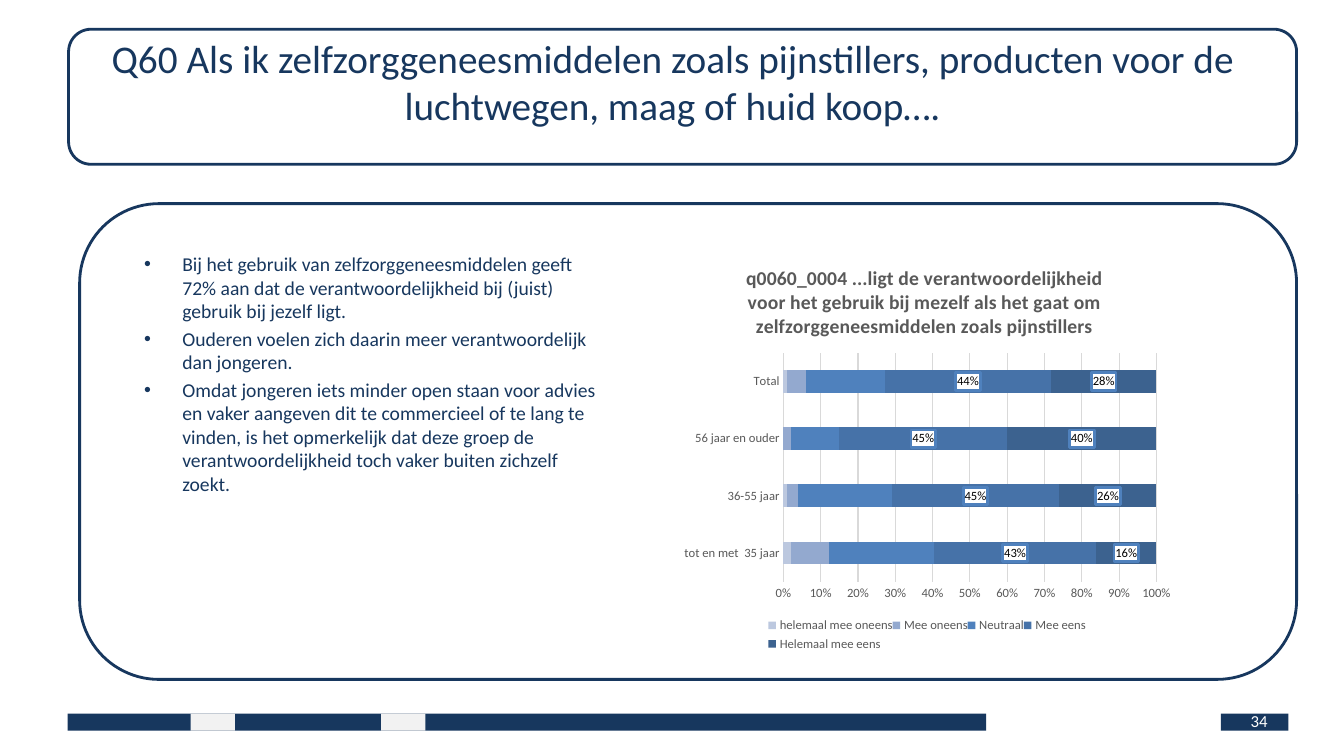
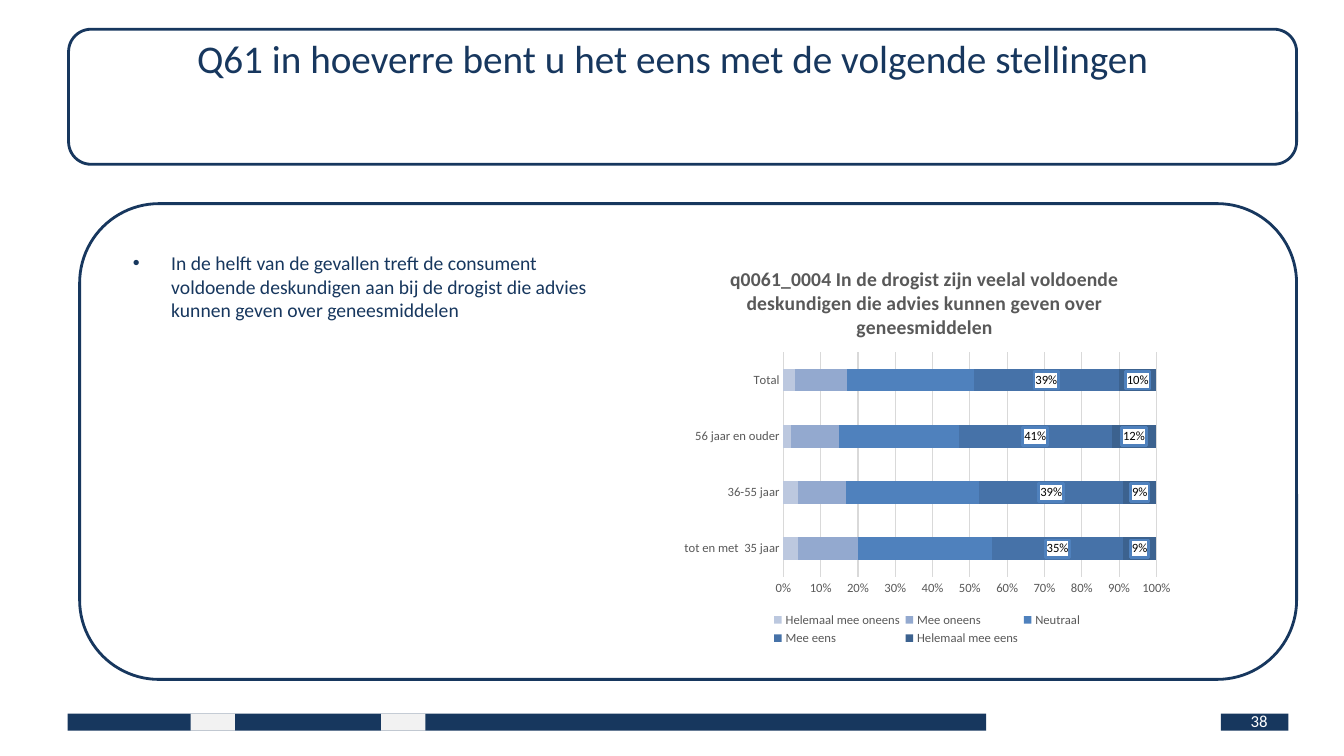
from lxml.etree import SubElement
from pptx import Presentation
from pptx.chart.data import CategoryChartData as ChartData
from pptx.dml.color import RGBColor
from pptx.enum.chart import XL_CHART_TYPE as Chart, XL_LEGEND_POSITION as Legend, XL_TICK_MARK as Tick
from pptx.enum.shapes import MSO_SHAPE as Shape
from pptx.enum.text import MSO_ANCHOR as Anchor, PP_ALIGN as Align
from pptx.oxml import parse_xml
from pptx.oxml.ns import nsdecls, qn
from pptx.util import Inches, Pt

NAVY = RGBColor(0x17, 0x37, 0x5E)
PALE = RGBColor(0xF2, 0xF2, 0xF2)
WHITE = RGBColor(0xFF, 0xFF, 0xFF)
BLACK = RGBColor(0, 0, 0)
GREY = RGBColor(0x59, 0x59, 0x59)
GRID = RGBColor(0xD9, 0xD9, 0xD9)
BLUES = [RGBColor.from_string(c) for c in ("BCC8DF", "93A9CF", "4F81BD", "4672A8", "3C628F")]
FONT = "Calibri"

GROUPS = ["tot en met  35 jaar", "36-55 jaar", "56 jaar en ouder", "Total"]
SCALE = ["Mee oneens", "Neutraal", "Mee eens", "Helemaal mee eens"]
LABELS = SCALE[-2:]

SLIDES = [
    {
        "title": "Q60 Als ik zelfzorggeneesmiddelen zoals pijnstillers, producten voor de "
                 "luchtwegen, maag of huid koop….",
        "points": [
            "Bij het gebruik van zelfzorggeneesmiddelen geeft 72% aan dat de "
            "verantwoordelijkheid bij (juist) gebruik bij jezelf ligt.",
            "Ouderen voelen zich daarin meer verantwoordelijk dan jongeren.",
            "Omdat jongeren iets minder open staan voor advies en vaker aangeven dit te "
            "commercieel of te lang te vinden, is het opmerkelijk dat deze groep de "
            "verantwoordelijkheid toch vaker buiten zichzelf zoekt.",
        ],
        "text_box": (1.33, 2.45, 4.79, 4.05),
        "chart_box": (6.67, 2.45, 5, 4.05),
        "head": "q0060_0004 ...ligt de verantwoordelijkheid voor het gebruik bij mezelf als "
                "het gaat om zelfzorggeneesmiddelen zoals pijnstillers",
        "names": ["helemaal mee oneens"] + SCALE,
        "rows": [
            (0.02, 0.01, 0, 0.01),
            (0.1, 0.03, 0.02, 0.05),
            (0.28, 0.25, 0.13, 0.21),
            (0.43, 0.45, 0.45, 0.44),
            (0.16, 0.26, 0.4, 0.28),
        ],
        "page": "34",
    },
    {
        "title": "Q61 in hoeverre bent u het eens met de volgende stellingen",
        "points": [
            "In de helft van de gevallen treft de consument voldoende deskundigen aan bij "
            "de drogist die advies kunnen geven over geneesmiddelen",
        ],
        "text_box": (1.22, 2.44, 4.95, 3.98),
        "chart_box": (6.67, 2.46, 5, 3.98),
        "head": "q0061_0004 In de drogist zijn veelal voldoende deskundigen die advies "
                "kunnen geven over geneesmiddelen",
        "names": ["Helemaal mee oneens"] + SCALE,
        "rows": [
            (0.04, 0.04, 0.02, 0.03),
            (0.16, 0.13, 0.13, 0.14),
            (0.36, 0.36, 0.32, 0.34),
            (0.35, 0.39, 0.41, 0.39),
            (0.09, 0.09, 0.12, 0.1),
        ],
        "page": "38",
    },
]


def inch(box):
    return [Inches(v) for v in box]


def style(font, size, color, bold=False):
    font.name, font.size, font.bold = FONT, Pt(size), bold
    font.color.rgb = color


def add_block(slide, kind, box, fill=None, line=None):
    block = slide.shapes.add_shape(kind, *inch(box))
    block.shadow.inherit = False
    if fill is None:
        block.fill.background()
    else:
        block.fill.solid()
        block.fill.fore_color.rgb = fill
    if line is None:
        block.line.fill.background()
    else:
        block.line.color.rgb = line
        block.line.width = Pt(2)


def add_frame(slide, page):
    # Footer band
    for left, width, fill in ((0.67, 9.11, NAVY), (12.11, 0.67, NAVY),
                              (1.89, 0.44, PALE), (3.78, 0.44, PALE)):
        add_block(slide, Shape.RECTANGLE, (left, 7.08, width, 0.17), fill)
    # Title and content panels
    add_block(slide, Shape.ROUNDED_RECTANGLE, (0.68, 0.29, 12.18, 1.34), WHITE, NAVY)
    add_block(slide, Shape.ROUNDED_RECTANGLE, (0.79, 2.02, 12.07, 4.72), None, NAVY)
    # Page number
    frame = slide.shapes.add_textbox(*inch((9.56, 6.95, 3.11, 0.4))).text_frame
    frame.word_wrap = True
    frame.vertical_anchor = Anchor.MIDDLE
    para = frame.paragraphs[0]
    para.text, para.alignment = page, Align.RIGHT
    style(para.font, 12, WHITE)


def set_title(slide, text):
    title = slide.shapes.title
    title.left, title.top, title.width, title.height = inch((0.67, 0.29, 12, 1.25))
    frame = title.text_frame
    frame.text = text
    frame.word_wrap = True
    frame.vertical_anchor = Anchor.TOP
    para = frame.paragraphs[0]
    para.alignment = Align.CENTER
    style(para.font, 28, NAVY)
    # Bring the title in front of its panel
    slide.shapes.element.append(title.element)


def add_points(slide, box, points):
    frame = slide.shapes.add_textbox(*inch(box)).text_frame
    frame.word_wrap = True
    for i, text in enumerate(points):
        para = frame.add_paragraph() if i else frame.paragraphs[0]
        para.text = text
        props = para._p.get_or_add_pPr()
        props.set("marL", str(Inches(0.38)))
        props.set("indent", str(-Inches(0.38)))
        SubElement(props, qn("a:buFont")).set("typeface", "Arial")
        SubElement(props, qn("a:buChar")).set("char", "•")
        if i:
            para.space_before = Pt(2.8)
        style(para.font, 14, NAVY)


def place(part, index, box, inner=False):
    """Fix a chart part at fractions of the chart area."""
    for old in part.findall(qn("c:layout")):
        part.remove(old)
    layout = parse_xml(f"<c:layout {nsdecls('c')}><c:manualLayout/></c:layout>")
    marks = [("layoutTarget", "inner")] if inner else []
    marks += [("xMode", "edge"), ("yMode", "edge"), *zip("xywh", box)]
    for tag, val in marks:
        SubElement(layout[0], qn(f"c:{tag}")).set("val", str(val))
    part.insert(index, layout)


def add_labels(series):
    labels = series.data_labels
    labels.show_value = True
    labels.number_format, labels.number_format_is_linked = "0%", False
    style(labels.font, 9, BLACK)
    box = parse_xml(
        f"<c:spPr {nsdecls('c', 'a')}><a:solidFill><a:srgbClr val='{WHITE}'/></a:solidFill>"
        f"<a:ln w='{Pt(2)}'><a:solidFill><a:srgbClr val='{BLUES[2]}'/></a:solidFill></a:ln></c:spPr>")
    labels._element.find(qn("c:txPr")).addprevious(box)


def add_bars(slide, box, head, names, rows):
    data = ChartData(number_format="0%")
    data.categories = GROUPS
    for name, row in zip(names, rows):
        data.add_series(name, row)
    chart = slide.shapes.add_chart(Chart.BAR_STACKED_100, *inch(box), data).chart
    style(chart.font, 10, BLACK)

    # Heading
    chart.has_title = True
    para = chart.chart_title.text_frame.paragraphs[0]
    para.text = head
    style(para.font, 14, GREY, True)

    # Bars
    plot = chart.plots[0]
    plot.gap_width, plot.overlap, plot.vary_by_categories = 150, 100, False
    for series, color in zip(plot.series, BLUES):
        series.format.fill.solid()
        series.format.fill.fore_color.rgb = color
        if series.name in LABELS:
            add_labels(series)

    # Axes
    groups, share = chart.category_axis, chart.value_axis
    for axis in (groups, share):
        axis.major_tick_mark = axis.minor_tick_mark = Tick.NONE
        style(axis.tick_labels.font, 9, GREY)
    share.has_major_gridlines = True
    for line in (groups.format.line, share.major_gridlines.format.line):
        line.color.rgb, line.width = GRID, Pt(0.75)
    share.format.line.fill.background()
    share.minimum_scale, share.maximum_scale, share.major_unit = 0, 1, 0.1
    share.tick_labels.number_format = "0%"
    share.tick_labels.number_format_is_linked = False

    # Legend and plot position
    chart.has_legend = True
    legend = chart.legend
    legend.position, legend.include_in_layout = Legend.BOTTOM, False
    style(legend.font, 9, GREY)
    place(legend._element, 1, (0.19, 0.9, 0.63, 0.1))
    area = chart.element.find(".//" + qn("c:plotArea"))
    place(area, 0, (0.22, 0.26, 0.74, 0.56), True)


def main():
    deck = Presentation()
    deck.slide_width, deck.slide_height = Inches(13.33), Inches(7.5)
    for item in SLIDES:
        slide = deck.slides.add_slide(deck.slide_layouts[5])
        add_frame(slide, item["page"])
        set_title(slide, item["title"])
        add_points(slide, item["text_box"], item["points"])
        add_bars(slide, item["chart_box"], item["head"], item["names"], item["rows"])
    deck.save("out.pptx")


if __name__ == "__main__":
    main()
